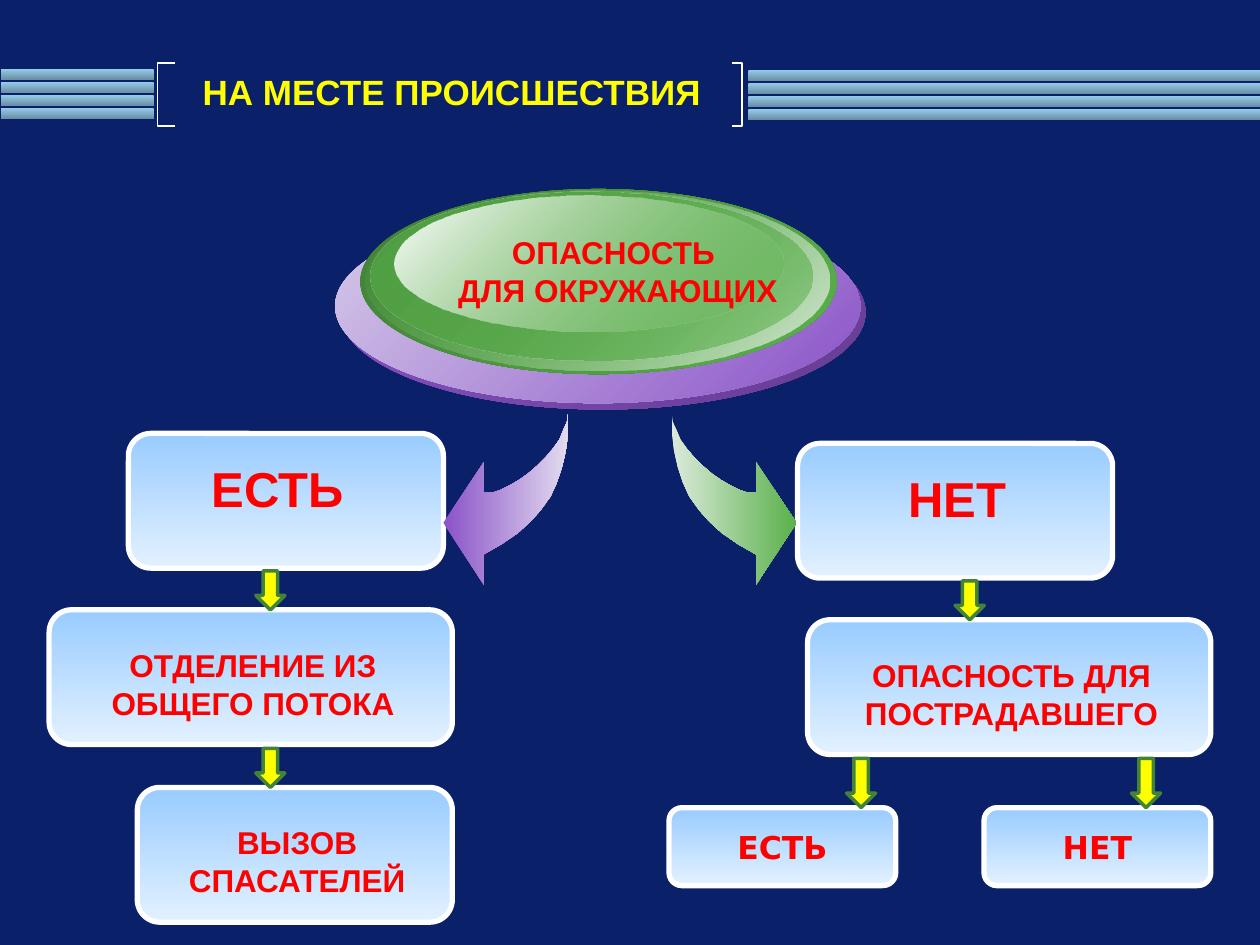
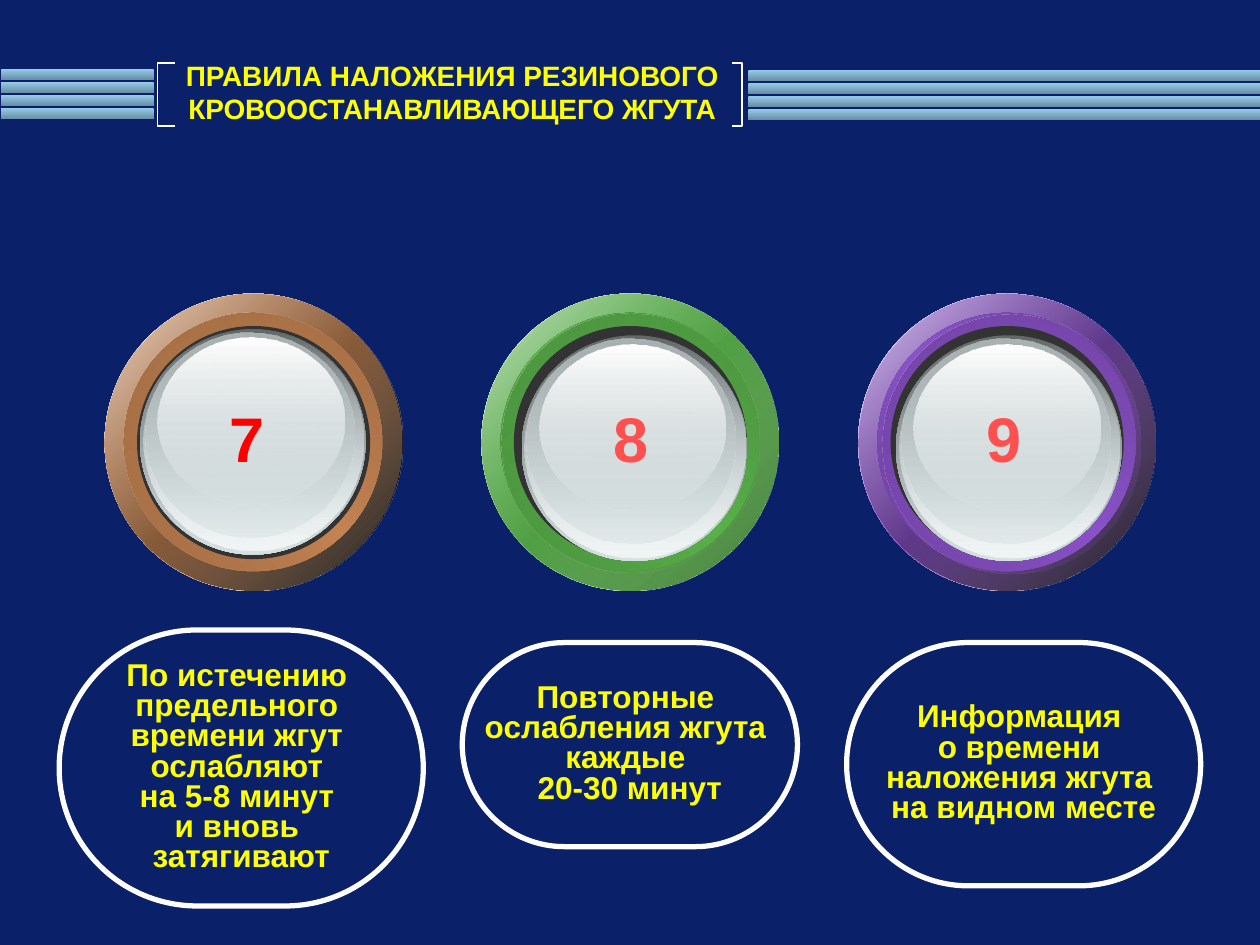
from lxml import etree
from pptx import Presentation
from pptx.dml.color import RGBColor
from pptx.enum import shapes, text
from pptx.oxml.ns import qn
from pptx.util import Pt


class Theme:
    back, white, red, rose, yellow = "0A2068", "FFFFFF", "FF0000", "FF5050", "FFFF00"
    edge, dark = "438337", "333333"
    violet, green, brown = "8A52C8", "5AB14B", "C48352"
    font, alt = "Arial", "DejaVu Sans"
    head, long, body, big, num = 20, 16, 18, 28, 36
    thin, mid, thick = 0.75, 2, 3
    band = (90, [(0, "94CAE8"), (100, "6A90A6")])
    card = (90, [(0, "99CCFF"), (100, "E3F1FF")])


T = Theme
KIND = shapes.MSO_SHAPE

BANDS = [(0.7, 39.6, 87.1), (427.7, 40.2, 292.3)]
HOOKS = [(100, 90), (418.3, 424)]

CARDS = [
    ("ЕСТЬ", 73.4, 247.7, 180, T.big, 5),
    ("НЕТ", 455.8, 253.4, 180, T.big, 11),
    ("ОТДЕЛЕНИЕ ИЗ ОБЩЕГО ПОТОКА", 28.1, 348.5, 230.4, T.body, 11),
    ("ВЫЗОВ СПАСАТЕЛЕЙ", 78.5, 450, 180, T.body, 11),
    ("ОПАСНОСТЬ ДЛЯ ПОСТРАДАВШЕГО", 461.5, 354.2, 230.4, T.body, 11),
]
ENDS = [("ЕСТЬ", 382.3), ("НЕТ", 562.3)]
STEPS = [(146.2, 326.2, 22.3), (146.2, 427.7, 22.3), (483.8, 433.4, 28.1),
         (646.6, 433.4, 28.1), (545.8, 331.9, 22.3)]
DOME = [
    (194.4, 123.1, 300.2, 110.9, [(0, T.violet), (100, "653C92")]),
    (191.5, 119.5, 300.2, 110.9, [(0, "D6CBE9"), (100, T.violet)]),
    (205.9, 108, 272.2, 105.8, [(0, "407F36"), (100, T.green)]),
    (208.8, 108.7, 265, 103, [(0, T.green, 0), (100, "D8E8D7")]),
    (211.7, 109.4, 252.7, 96.5, [(0, "51A044"), (100, T.green, 48)]),
    (225.4, 111.6, 222.5, 77.8, [(0, T.white), (100, T.green, 38)]),
]
DANGER = ["ОПАСНОСТЬ ", "ДЛЯ ОКРУЖАЮЩИХ"]
CURVE = [
    (324.7, 236.2), (324.7, 247), (323.3, 257.8), (321.1, 267.1), (318.2, 275.8),
    (314.6, 283.7), (308.9, 291.6), (303.1, 298.1), (295.9, 304.6), (286.6, 311),
    (276.5, 316.8), (276.5, 334.1), (253.4, 298.8), (276.5, 264.2), (276.5, 281.5),
    (281.5, 281.5), (285.8, 280.1), (291.6, 277.2), (296.6, 274.3), (301.7, 270.7),
    (306.7, 266.4), (311.8, 261.4), (316.1, 256.3), (319.7, 251.3), (321.8, 246.2),
    (324, 241.2),
]
MIRROR = 708.5
SWEEPS = [(T.violet, "E2DBEF"), ("DCEADB", T.green)]

RINGS = [
    dict(num="7", hue=T.brown, rim="96643F", mid="A16C43", end=("000000", 90),
         glow=(10.8, 10.8), cap=(20.2, 20.2), ink=T.red, left=123.8),
    dict(num="8", hue=T.green, rim="458839", mid="4A913E", end=("407F36", 100),
         glow=(11.5, 11.5), cap=(23, 23.8), ink=T.rose, left=343.4),
    dict(num="9", hue=T.violet, rim="6A3F99", mid="7143A4", end=("000000", 90),
         glow=(13.7, 12.2), cap=(21.6, 23.8), ink=T.rose, left=556.6),
]
CAP = [
    (0, 0, 128.9, 128.9, [(0, "636869"), (100, "D6E1E2")]),
    (1.8, 0.8, 126, 126, [(0, "D6E1E2", 0), (100, "F1F5F5")]),
    (2.9, 1.8, 119.5, 117.4, [(0, "AAB2B3"), (100, "D6E1E2", 48)]),
    (10.1, 5, 106.6, 95, [(0, T.white), (100, "D6E1E2", 38)]),
]
PILLS = [
    (33.8, 360, 208.1, 157.7,
     ["По истечению ", "предельного ", "времени жгут ", "ослабляют ",
      "на 5-8 минут ", "и вновь ", "затягивают"]),
    (264.2, 367.2, 191.5, 116.6,
     ["Повторные ", "ослабления жгута ", "каждые ", "20-30 минут"]),
    (483.8, 367.2, 202.3, 139,
     ["Информация ", "о времени ", "наложения жгута ", "на видном месте"]),
]


def rgb(hue):
    return RGBColor.from_string(hue)


def paint(shape, fill=None, line=None):
    shape.shadow.inherit = False
    if fill is None:
        shape.fill.background()
    elif isinstance(fill, str):
        shape.fill.solid()
        shape.fill.fore_color.rgb = rgb(fill)
    else:
        angle, stops = fill
        shape.fill.gradient()
        shape.fill.gradient_angle = -angle % 360
        grad = shape._element.spPr.find(qn("a:gradFill"))
        items = grad.find(qn("a:gsLst"))
        items.clear()
        for pos, hue, *alpha in stops:
            stop = etree.SubElement(items, qn("a:gs"), pos=str(pos * 1000))
            tint = etree.SubElement(stop, qn("a:srgbClr"), val=hue)
            if alpha:
                etree.SubElement(tint, qn("a:alpha"), val=str(alpha[0] * 1000))
    if line:
        hue, width = line
        shape.line.color.rgb = rgb(hue)
        shape.line.width = Pt(width)
    else:
        shape.line.fill.background()
    return shape


def draw(slide, kind, box, fill=None, line=None):
    return paint(slide.shapes.add_shape(kind, *map(Pt, box)), fill, line)


def trace(slide, dots, closed, fill=None, line=None):
    dots = [(Pt(x), Pt(y)) for x, y in dots]
    pen = slide.shapes.build_freeform(*dots[0])
    pen.add_line_segments(dots[1:], close=closed)
    return paint(pen.convert_to_shape(), fill, line)


def write(shape, lines, size, hue, font=T.font, wrap=False, mid=False, gap=None):
    frame = shape.text_frame
    frame.word_wrap = wrap
    frame.vertical_anchor = text.MSO_ANCHOR.MIDDLE if mid else text.MSO_ANCHOR.TOP
    frame.text = "\n".join(lines)
    for par in frame.paragraphs:
        par.alignment = text.PP_ALIGN.CENTER
        par.line_spacing = gap
        par.font.name = font
        par.font.size = Pt(size)
        par.font.bold = True
        par.font.color.rgb = rgb(hue)


def label(slide, box, *args, **opts):
    write(slide.shapes.add_textbox(*map(Pt, box)), *args, **opts)


def start(deck, title, left, width, size):
    slide = deck.slides.add_slide(deck.slide_layouts[6])
    for x, top, wide in BANDS:
        for row in range(4):
            draw(slide, KIND.RECTANGLE, (x, top + row * 7.45, wide, 5.8), T.band)
    for tip, back in HOOKS:
        trace(slide, [(tip, 36), (back, 36), (back, 72), (tip, 72)], False,
              line=(T.white, T.thin))
    label(slide, (left, 30.2, width, 44.6), [title], size, T.yellow,
          wrap=True, mid=True)
    return slide


def scene(deck):
    slide = start(deck, "НА МЕСТЕ ПРОИСШЕСТВИЯ", 102.2, 311.8, T.head)
    rim = (T.white, T.thick)
    for words, x, y, wide, size, inset in CARDS:
        draw(slide, KIND.ROUNDED_RECTANGLE, (x, y, wide, 77), T.card, rim)
        drop = 10.8 if size == T.big else 17
        label(slide, (x + inset, y + drop, wide - 19.4, 51), [words], size, T.red,
              wrap=True)
    flip = [(MIRROR - x, y) for x, y in CURVE]
    for dots, (first, last) in zip((CURVE, flip), SWEEPS):
        trace(slide, dots, True, (0, [(0, first), (100, last)]))
    for *box, stops in DOME:
        draw(slide, KIND.OVAL, box, (45, stops))
    label(slide, (253.4, 129.6, 199.4, 51), DANGER, T.body, T.red)
    for words, x in ENDS:
        card = draw(slide, KIND.ROUNDED_RECTANGLE, (x, 461.5, 129.6, 44.6), T.card, rim)
        write(card, [words], T.body, T.red, T.alt, mid=True)
    for x, y, tall in STEPS:
        draw(slide, KIND.DOWN_ARROW, (x, y, 16.6, tall), T.yellow, (T.edge, T.mid))


def rules(deck):
    slide = start(deck, "ПРАВИЛА НАЛОЖЕНИЯ РЕЗИНОВОГО КРОВООСТАНАВЛИВАЮЩЕГО ЖГУТА",
                  78.5, 360, T.long)
    top = 167.8
    for col, ring in enumerate(RINGS):
        x = 59.8 + col * 215.3
        hue, rim = ring["hue"], ring["rim"]
        layers = [
            (0, 0, 169.9, (45, [(0, T.white), (50, hue), (100, T.white)])),
            (0, 0, 169.9, (45, [(0, hue, 32), (100, *ring["end"])])),
            (11, 11, 147.6, (315, [(0, rim), (50, hue), (100, rim)])),
            (*ring["glow"], 147.6, (45, [(0, ring["mid"]), (100, hue, 0)])),
            (18.5, 18.5, 133.2, T.dark),
        ]
        for dx, dy, size, fill in layers:
            draw(slide, KIND.OVAL, (x + dx, top + dy, size, size), fill)
        cx, cy = ring["cap"]
        for dx, dy, wide, tall, stops in CAP:
            draw(slide, KIND.OVAL, (x + cx + dx, top + cy + dy, wide, tall), (90, stops))
        label(slide, (ring["left"], 224.6, 34.6, 51), [ring["num"]], T.num, ring["ink"])
    for *box, lines in PILLS:
        pill = draw(slide, KIND.ROUNDED_RECTANGLE, box, line=(T.white, T.thick))
        pill.adjustments[0] = 0.5
        write(pill, lines, T.body, T.yellow, mid=True, gap=0.8)


def main():
    deck = Presentation()
    deck.slide_width, deck.slide_height = Pt(720), Pt(540)
    fill = deck.slide_master.background.fill
    fill.solid()
    fill.fore_color.rgb = rgb(T.back)
    scene(deck)
    rules(deck)
    deck.save("out.pptx")


if __name__ == "__main__":
    main()
